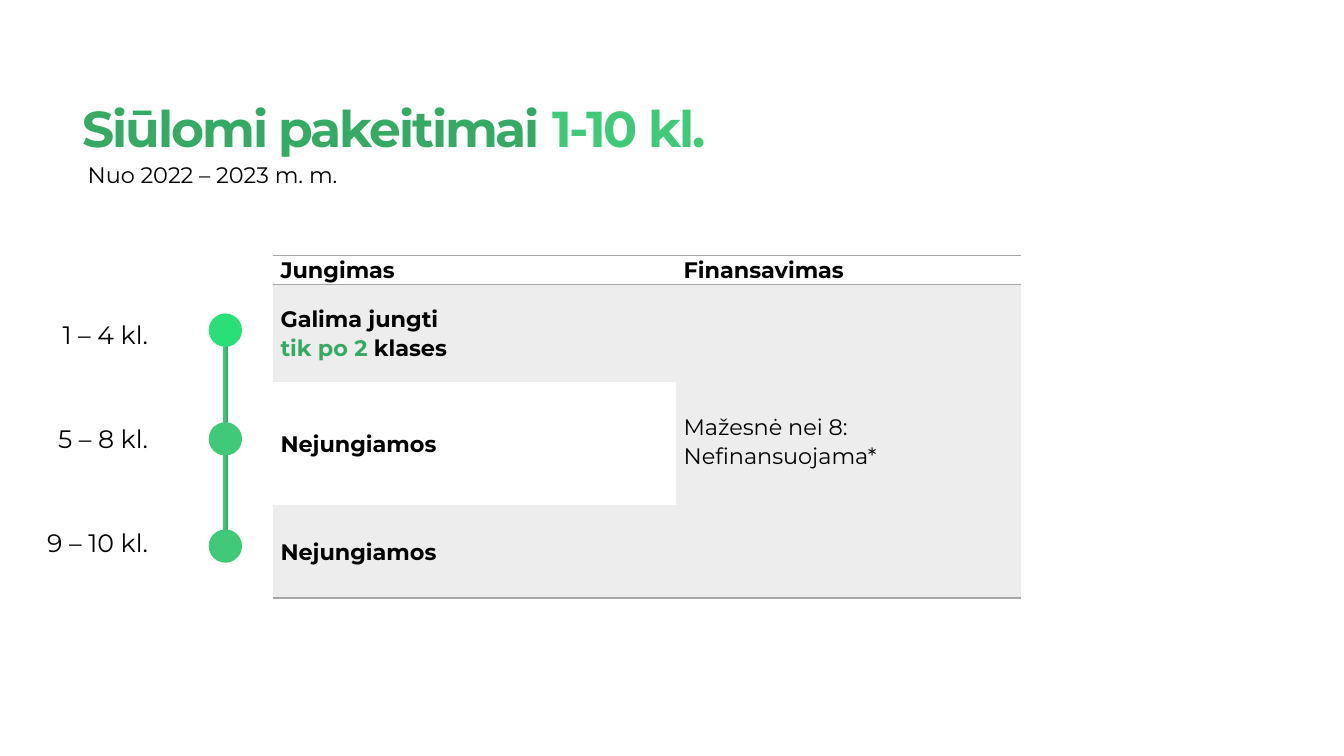
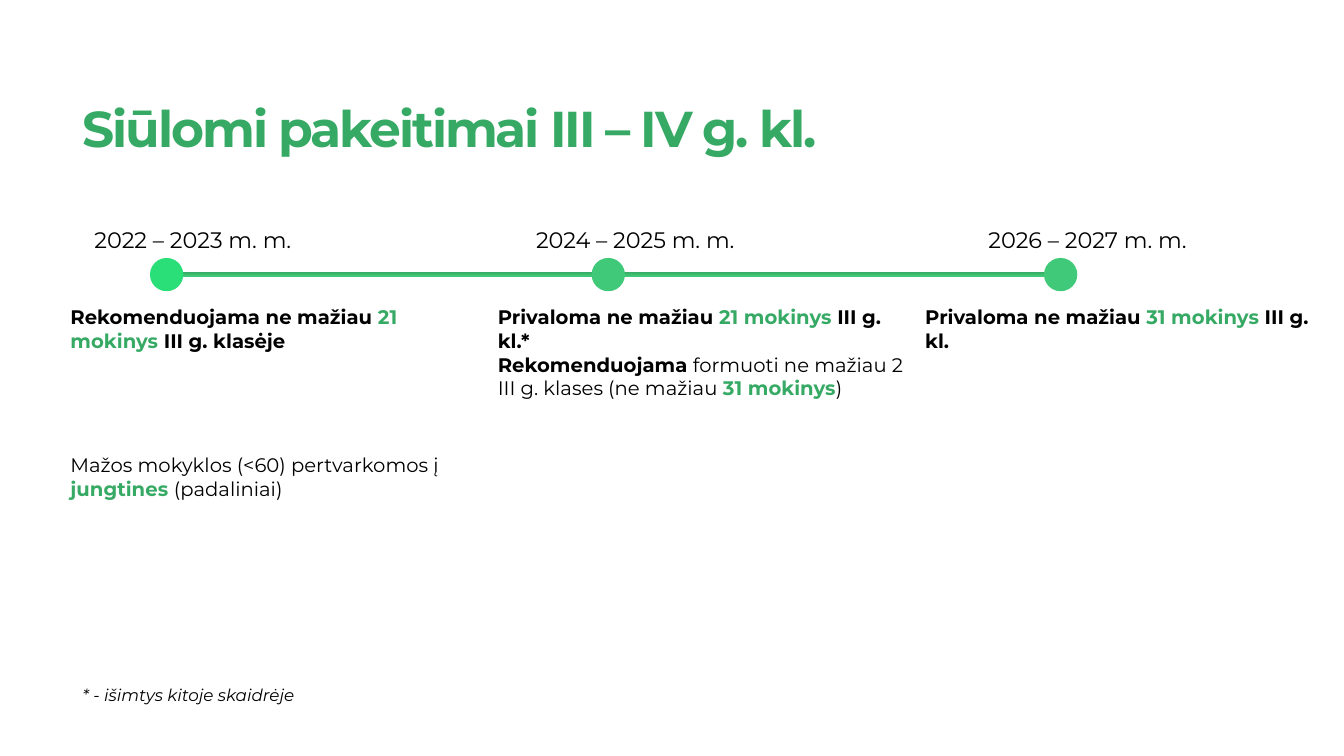
from lxml import etree
from pptx import Presentation
from pptx import util as u
from pptx.dml.color import RGBColor
from pptx.enum import shapes, text
from pptx.oxml.ns import qn

COLORS = {
    "green": "36AA65",
    "light": "40C978",
    "bright": "2BDF78",
    "text": "000000",
    "rule": "A5A5A5",
    "band": "EDEDED",
}
FONT = "Montserrat"
NO_TABLE_STYLE = "{2D5ABB26-0587-4C30-8999-92F81FD0307C}"
DOT = 0.84
BAR = 0.13

BOLD = {"bold": True}
ACCENT = {"bold": True, "color": "green"}


def rgb(name):
    return RGBColor.from_string(COLORS[name])


def write_text(frame, paragraphs, size=16, color="text", bold=False, italic=False,
               spacing=None, line_spacing=None, align=text.PP_ALIGN.LEFT):
    """Fill a frame; each paragraph is a list of (text, format overrides) runs."""
    for index, runs in enumerate(paragraphs):
        paragraph = frame.paragraphs[0] if index == 0 else frame.add_paragraph()
        paragraph.alignment = align
        if line_spacing:
            paragraph.line_spacing = line_spacing
        for content, overrides in runs:
            run = paragraph.add_run()
            run.text = content
            run.font.name = FONT
            run.font.size = u.Pt(size)
            run.font.bold = overrides.get("bold", bold)
            run.font.italic = italic
            run.font.color.rgb = rgb(overrides.get("color", color))
            if spacing:
                run.font._element.set("spc", str(int(spacing * 100)))


def add_label(slide, left, top, width, height, content, **text_format):
    box = slide.shapes.add_textbox(u.Cm(left), u.Cm(top), u.Cm(width), u.Cm(height))
    box.text_frame.word_wrap = True
    write_text(box.text_frame, [[(content, {})]], **text_format)


def add_titled_slide(presentation, title_runs):
    slide = presentation.slides.add_slide(presentation.slide_layouts[5])
    title = slide.shapes.title
    title.left, title.top = u.Cm(1.83), u.Cm(2.16)
    title.width, title.height = u.Cm(28.75), u.Cm(1.96)
    frame = title.text_frame
    frame.auto_size = text.MSO_AUTO_SIZE.NONE
    frame.vertical_anchor = text.MSO_ANCHOR.BOTTOM
    write_text(frame, [title_runs], size=36, color="green", bold=True,
               spacing=-1.5, line_spacing=0.9)
    return slide


def add_plain_shape(slide, kind, left, top, width, height):
    shape = slide.shapes.add_shape(kind, u.Cm(left), u.Cm(top), u.Cm(width), u.Cm(height))
    shape.shadow.inherit = False
    shape.line.fill.background()
    return shape


def add_timeline(slide, left, top, offsets, vertical=False):
    """Draw a bar with a dot at each offset; left and top are those of the first dot."""
    middle = (DOT - BAR) / 2
    length = offsets[-1]
    if vertical:
        box, angle = (left + middle, top + DOT / 2, BAR, length), 180
    else:
        box, angle = (left + DOT / 2, top + middle, length, BAR), 270
    bar = add_plain_shape(slide, shapes.MSO_SHAPE.RECTANGLE, *box)
    bar.fill.gradient()
    bar.fill.gradient_angle = angle
    for stop, color, position in zip(bar.fill.gradient_stops, ("green", "light"), (0, 0.81)):
        stop.color.rgb = rgb(color)
        stop.position = position

    for index, offset in enumerate(offsets):
        x, y = (left, top + offset) if vertical else (left + offset, top)
        dot = add_plain_shape(slide, shapes.MSO_SHAPE.OVAL, x, y, DOT, DOT)
        dot.fill.solid()
        dot.fill.fore_color.rgb = rgb("light" if index else "bright")


def add_plain_table(slide, left, top, widths, heights, contents, **text_format):
    """Add an unstyled table; contents maps (row, column) to paragraphs."""
    table = slide.shapes.add_table(
        len(heights), len(widths), u.Cm(left), u.Cm(top),
        u.Cm(sum(widths)), u.Cm(sum(heights))).table
    properties = table._tbl.tblPr
    properties.find(qn("a:tableStyleId")).text = NO_TABLE_STYLE
    table.first_row = table.horz_banding = False
    for column, width in zip(table.columns, widths):
        column.width = u.Cm(width)
    for row, height in zip(table.rows, heights):
        row.height = u.Cm(height)
    for cell in table.iter_cells():
        cell.fill.background()
    for position, paragraphs in contents.items():
        write_text(table.cell(*position).text_frame, paragraphs, **text_format)
    return table


def add_rule(cell, side):
    """Draw a thin line on the top (lnT) or bottom (lnB) of a cell."""
    properties = cell._tc.get_or_add_tcPr()
    line = etree.Element(qn(f"a:{side}"), w=str(u.Pt(1)))
    fill = etree.SubElement(line, qn("a:solidFill"))
    etree.SubElement(fill, qn("a:srgbClr"), val=COLORS["rule"])
    position = len(properties.findall(qn("a:lnT")))
    properties.insert(position, line)


def add_class_table(slide, left, top):
    separate = [[("Nejungiamos", BOLD)]]
    contents = {
        (0, 0): [[("Jungimas", BOLD)]],
        (0, 1): [[("Finansavimas", BOLD)]],
        (1, 0): [[("Galima jungti", BOLD)], [("tik po 2 ", ACCENT), ("klases", BOLD)]],
        (1, 1): [[("Mažesnė nei 8:", {})], [("Nefinansuojama*", {})]],
        (2, 0): separate,
        (3, 0): separate,
    }
    table = add_plain_table(slide, left, top, [10.16, 8.69], [0.74, 2.46, 3.1, 2.34],
                            contents, line_spacing=1.07)
    table.cell(1, 1).merge(table.cell(3, 1))
    for cell in table.iter_cells():
        cell.vertical_anchor = text.MSO_ANCHOR.MIDDLE
        cell.margin_left = cell.margin_right = u.Cm(0.19)
        cell.margin_top = cell.margin_bottom = 0
    for row, column in ((1, 0), (3, 0), (1, 1), (2, 1), (3, 1)):
        fill = table.cell(row, column).fill
        fill.solid()
        fill.fore_color.rgb = rgb("band")
    for column in range(2):
        add_rule(table.cell(0, column), "lnT")
        add_rule(table.cell(0, column), "lnB")
        add_rule(table.cell(3, column), "lnB")
    add_rule(table.cell(1, 1), "lnB")


def add_requirement_table(slide, left, top):
    contents = {
        (0, 0): [[("Rekomenduojama ne mažiau ", BOLD), ("21 mokinys ", ACCENT),
                  ("III g. klasėje", BOLD)]],
        (0, 1): [[("Privaloma ne mažiau ", BOLD), ("21 mokinys ", ACCENT),
                  ("III g. kl.*", BOLD)],
                 [("Rekomenduojama", BOLD),
                  (" formuoti ne mažiau 2 III g. klases (ne mažiau ", {}),
                  ("31 mokinys", ACCENT), (")", {})]],
        (0, 2): [[("Privaloma ne mažiau ", BOLD), ("31 mokinys ", ACCENT),
                  ("III g. kl.", BOLD)]],
        (1, 0): [[("Mažos mokyklos (<60) pertvarkomos į ", {}), ("jungtines ", ACCENT),
                  ("(padaliniai)", {})]],
    }
    add_plain_table(slide, left, top, [10.77, 10.77, 10.34], [3.73, 3.23], contents, size=14)


def build_lower_classes(presentation):
    slide = add_titled_slide(
        presentation, [("Siūlomi pakeitimai ", {}), ("1-10 kl.", {"color": "light"})])
    add_label(slide, 1.96, 3.94, 11.4, 0.94, "Nuo 2022 – 2023 m. m.")
    add_timeline(slide, 5.26, 7.9, [0, 2.74, 5.44], vertical=True)
    for index, grades in enumerate(("1 – 4 kl.", "5 – 8 kl.", "9 – 10 kl.")):
        add_label(slide, 0.5, 7.92 + 2.62 * index, 3.48, 1.02, grades, size=18,
                  align=text.PP_ALIGN.RIGHT)
    add_class_table(slide, 6.88, 6.43)


def build_upper_classes(presentation):
    slide = add_titled_slide(presentation, [("Siūlomi pakeitimai III – IV g. kl.", {})])
    offsets = [0, 11.13, 22.53]
    add_timeline(slide, 3.78, 6.5, offsets)
    years = ("2022 – 2023 m. m.", "2024 – 2025 m. m.", "2026 – 2027 m. m.")
    for offset, year in zip(offsets, years):
        add_label(slide, 2.13 + offset, 5.57, 6.83, 0.94, year)
    add_requirement_table(slide, 1.52, 7.57)
    add_label(slide, 1.83, 17.12, 7, 0.77, "* - išimtys kitoje skaidrėje", size=12, italic=True)


def main():
    presentation = Presentation()
    presentation.slide_width, presentation.slide_height = u.Cm(33.87), u.Cm(19.05)
    build_lower_classes(presentation)
    build_upper_classes(presentation)
    presentation.save("out.pptx")


if __name__ == "__main__":
    main()
